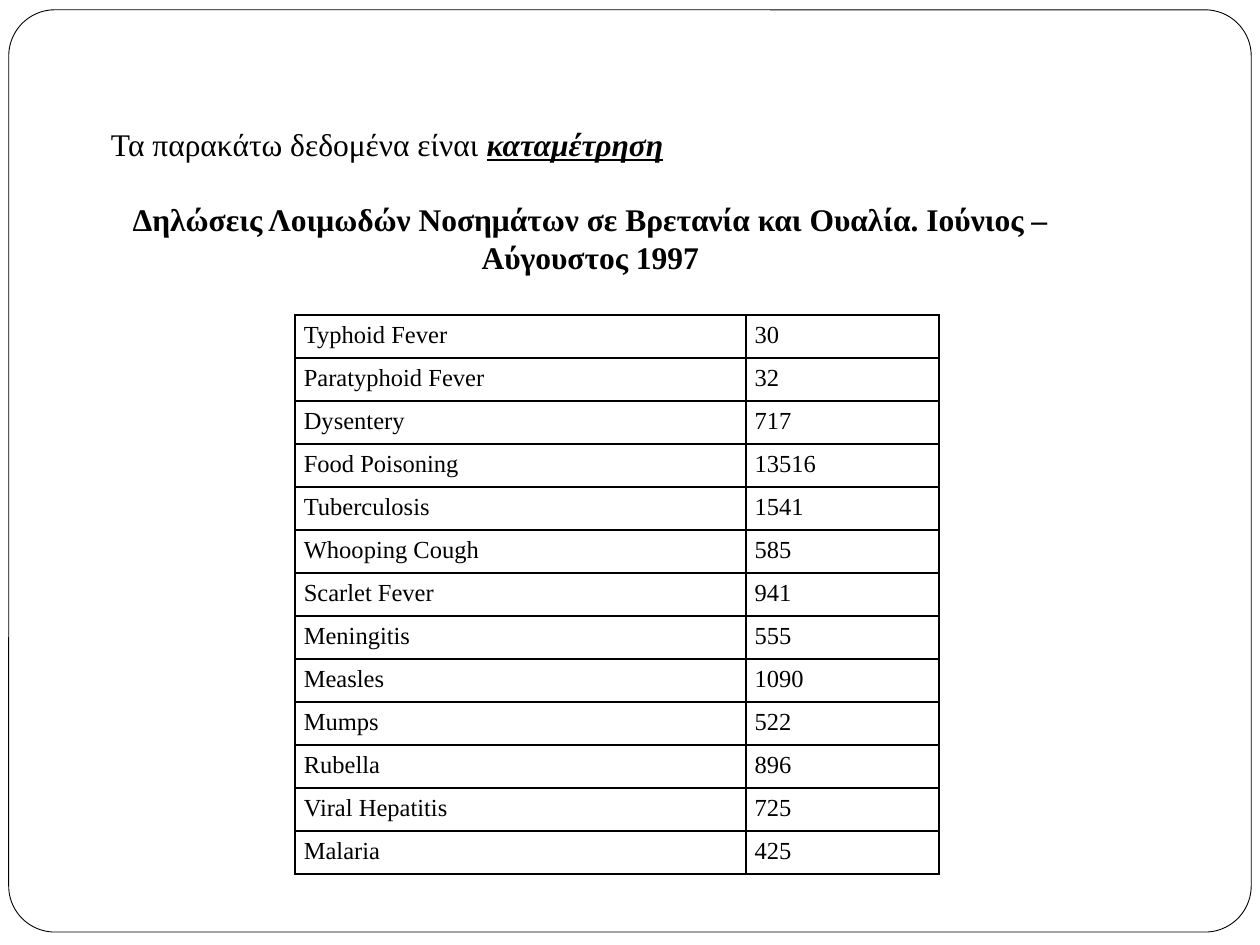
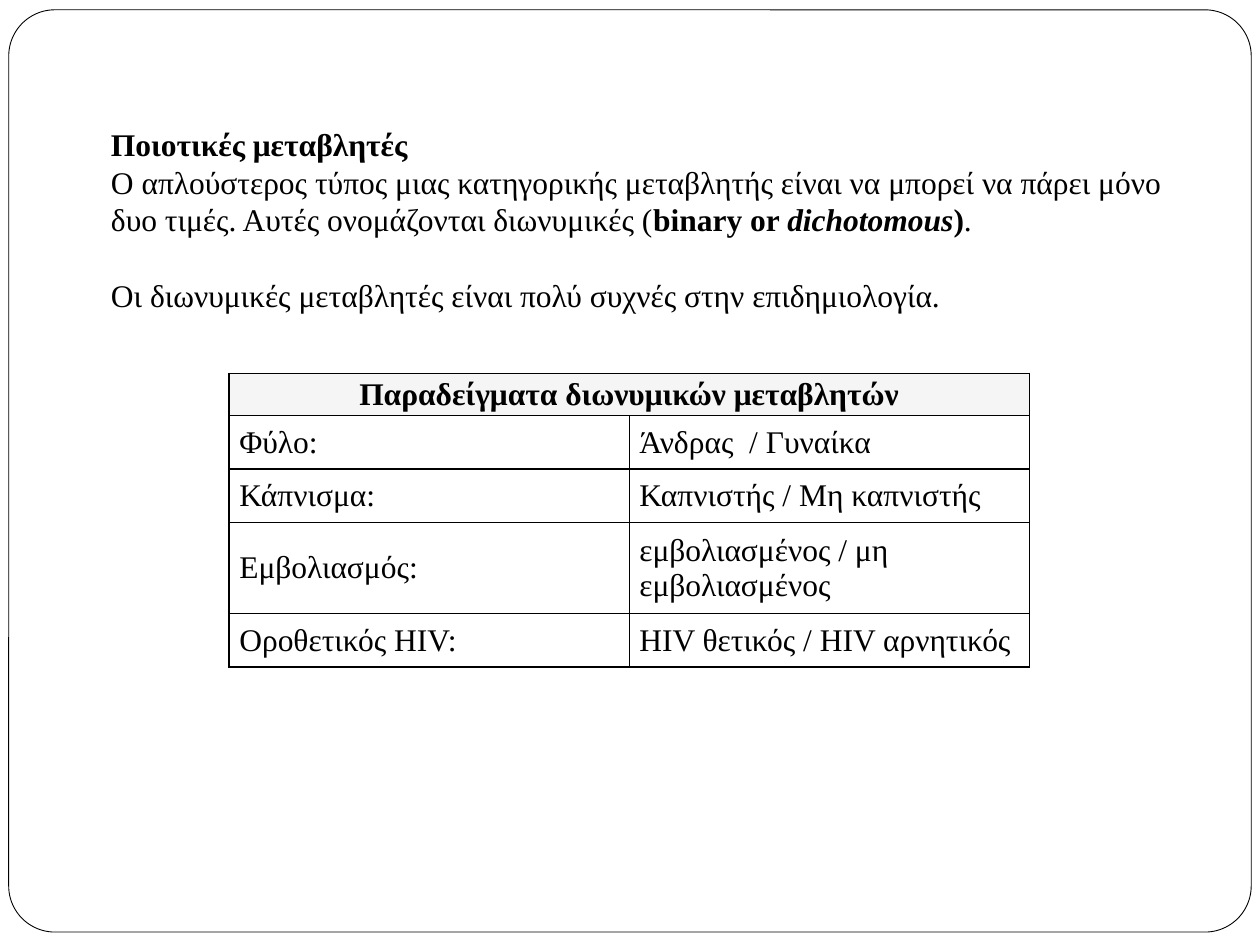
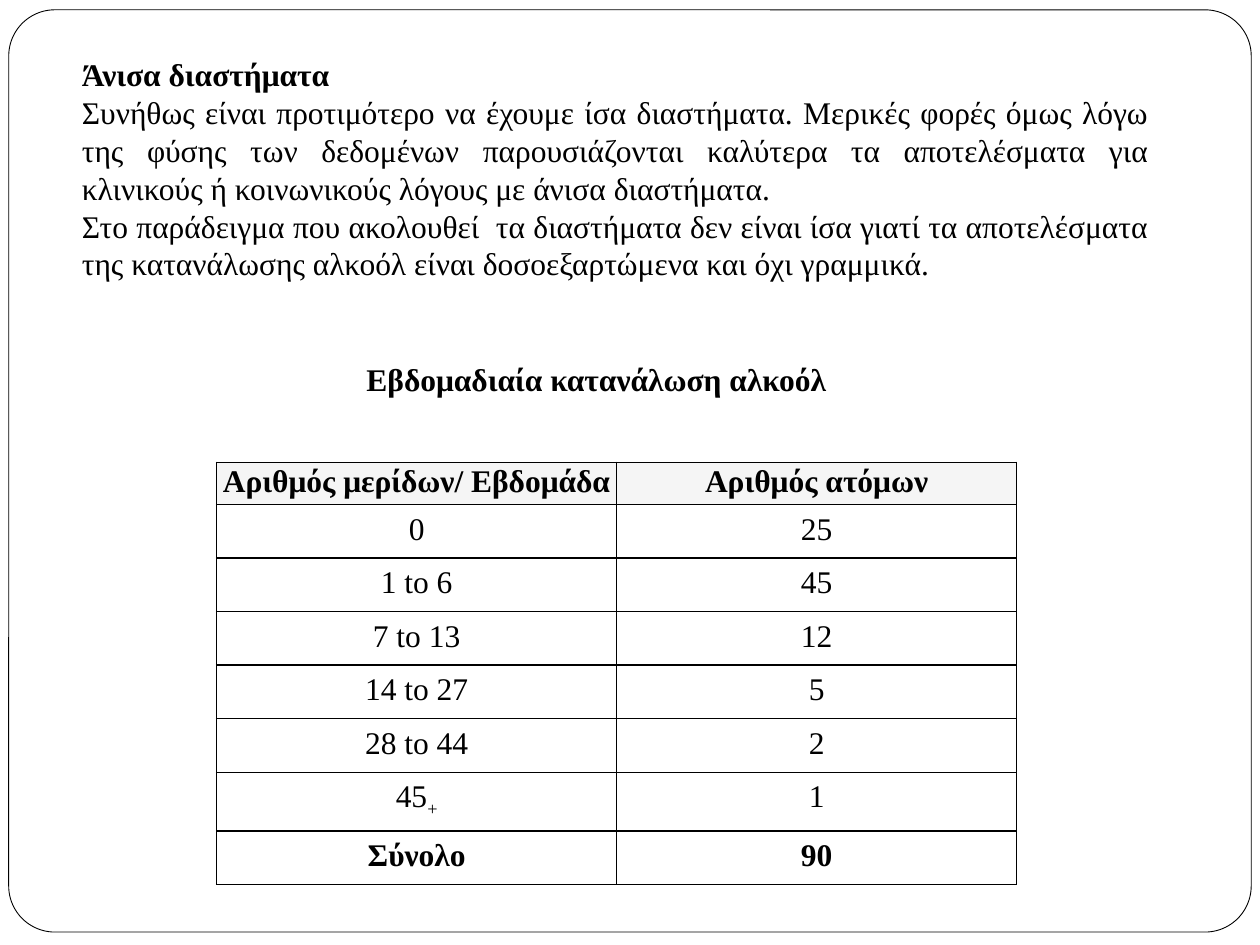
from pptx import Presentation
from pptx.dml.color import RGBColor
from pptx.enum import shapes, text
from pptx.oxml import parse_xml
from pptx.oxml import ns
from pptx.util import Pt

BLACK = RGBColor(0x00, 0x00, 0x00)
WHITE = RGBColor(0xFF, 0xFF, 0xFF)
HEADER = RGBColor(0xF5, 0xF5, 0xF5)
FONT = "Times New Roman"
LINE = 21.6  # line pitch of the 18 pt text
LEFT, CENTER, JUSTIFY = text.PP_ALIGN.LEFT, text.PP_ALIGN.CENTER, text.PP_ALIGN.JUSTIFY
TOP, MIDDLE = text.MSO_ANCHOR.TOP, text.MSO_ANCHOR.MIDDLE


def write(tf, paragraphs, align=LEFT, size=18, pitch=None, gap=0):
    """Fill a text frame; a paragraph is a list of (text, style letters)."""
    for i, runs in enumerate(paragraphs):
        p = tf.paragraphs[0] if i == 0 else tf.add_paragraph()
        p.alignment = align
        p.space_before = Pt(gap if i else 0)
        if pitch:
            p.line_spacing = Pt(pitch)
            pPr = p._p.get_or_add_pPr()
            pPr.set("marL", "0")
            pPr.set("indent", "0")
            pPr.append(parse_xml(f"<a:buNone {ns.nsdecls('a')}/>"))
        for words, style in runs:
            r = p.add_run()
            r.text = words
            r.font.name, r.font.size = FONT, Pt(size)
            r.font.color.rgb = BLACK
            r.font.bold, r.font.italic = "b" in style, "i" in style
            r.font.underline = "u" in style
            if "s" in style:
                r.font._element.set("baseline", "-25000")


def add_grid(s, left, top, widths, heights, rows, header=False, **look):
    """Add a table with thin black borders; a row is a list of run lists."""
    size, align = look.get("size", 18), look.get("align", LEFT)
    frame = s.shapes.add_table(len(rows), len(widths), Pt(left), Pt(top),
                               Pt(sum(widths)), Pt(sum(heights)))
    table = frame.table
    table.first_row = table.horz_banding = False
    for column, width in zip(table.columns, widths):
        column.width = Pt(width)
    for i, row in enumerate(rows):
        table.rows[i].height = Pt(heights[i])
        is_header = header and i == 0
        margin_x, margin_y = (1.4, 1.4) if is_header else look["margins"]
        for j in range(len(widths)):
            cell = table.cell(i, j)
            cell.fill.solid()
            cell.fill.fore_color.rgb = HEADER if is_header else WHITE
            cell.margin_left = cell.margin_right = Pt(margin_x)
            cell.margin_top = cell.margin_bottom = Pt(margin_y)
            cell.vertical_anchor = look.get("anchor", TOP)
            for k, side in enumerate("LRTB"):
                cell._tc.get_or_add_tcPr().insert(k, parse_xml(
                    f'<a:ln{side} {ns.nsdecls("a")} w="12700"><a:solidFill>'
                    f'<a:srgbClr val="{BLACK}"/></a:solidFill></a:ln{side}>'))
            if j < len(row):
                write(cell.text_frame, [row[j]], CENTER if is_header else align, size)
        if len(row) < len(widths):
            table.cell(i, 0).merge(table.cell(i, len(widths) - 1))


prs = Presentation()
prs.slide_width, prs.slide_height = Pt(720), Pt(540)
slides = [prs.slides.add_slide(prs.slide_layouts[1]) for _ in range(3)]

# Rounded frame, placed on the master behind everything
frame = slides[0].shapes.add_shape(shapes.MSO_SHAPE.ROUNDED_RECTANGLE,
                                   Pt(5), Pt(5.6), Pt(710), Pt(527))
frame.adjustments[0] = 0.05
frame.shadow.inherit = False
frame.fill.solid()
frame.fill.fore_color.rgb = WHITE
frame.line.color.rgb = BLACK
frame.line.width = Pt(0.5)
frame.element.nvSpPr.cNvPr.id = 20
prs.slide_master.shapes.element.insert(2, frame.element)

# Titles and body texts: box, alignment, gap between paragraphs, paragraphs
titles = [
    ((56.2, 110.9, 562.3, 50.4), CENTER, 0,
     [[("Δηλώσεις Λοιμωδών Νοσημάτων σε Βρετανία και Ουαλία. Ιούνιος – Αύγουστος 1997", "b")]]),
    ((56.2, 67.7, 621.4, 28.8), LEFT, 0, [[("Ποιοτικές μεταβλητές", "b")]]),
    ((39.6, 28.1, 624.2, 28.8), LEFT, 0, [[("Άνισα διαστήματα", "b")]]),
]
bodies = [
    ((56.2, 67.7, 562.3, 28.8), LEFT, 0,
     [[("Τα παρακάτω δεδομένα είναι ", ""), ("καταμέτρηση", "biu")]]),
    ((56.2, 67.7 + LINE, 621.4, 93.6), LEFT, LINE,
     [[("Ο απλούστερος τύπος μιας κατηγορικής μεταβλητής είναι να μπορεί να πάρει μόνο "
        "δυο τιμές. Αυτές ονομάζονται διωνυμικές (", ""),
       ("binary or ", "b"), ("dichotomous", "bi"), (")", "b"), (".", "")],
      [("Οι διωνυμικές μεταβλητές είναι πολύ συχνές στην επιδημιολογία.", "")]]),
    ((39.6, 28.1 + LINE, 624.2, 115.2), JUSTIFY, 0,
     [[("Συνήθως είναι προτιμότερο να έχουμε ίσα διαστήματα. Μερικές φορές όμως λόγω της "
        "φύσης των δεδομένων παρουσιάζονται καλύτερα τα αποτελέσματα για κλινικούς ή "
        "κοινωνικούς λόγους με άνισα διαστήματα.", "")],
      [("Στο παράδειγμα που ακολουθεί  τα διαστήματα δεν είναι ίσα γιατί τα αποτελέσματα "
        "της κατανάλωσης αλκοόλ είναι δοσοεξαρτώμενα και όχι γραμμικά.", "")]]),
]
for s, *texts in zip(slides, titles, bodies):
    for sp, (box, align, gap, paragraphs) in zip(s.placeholders, texts):
        sp.left, sp.top, sp.width, sp.height = map(Pt, box)
        tf = sp.text_frame
        tf.auto_size = text.MSO_AUTO_SIZE.NONE
        tf.vertical_anchor = TOP
        write(tf, paragraphs, align, pitch=LINE, gap=gap)

# Slide 1: disease counts
counts = [
    ("Typhoid Fever", 30), ("Paratyphoid Fever", 32), ("Dysentery", 717),
    ("Food Poisoning", 13516), ("Tuberculosis", 1541), ("Whooping Cough", 585),
    ("Scarlet Fever", 941), ("Meningitis", 555), ("Measles", 1090), ("Mumps", 522),
    ("Rubella", 896), ("Viral Hepatitis", 725), ("Malaria", 425),
]
add_grid(slides[0], 168.6, 180, [257.6, 110.4], [24.6] * len(counts),
         [[[(name, "")], [(str(n), "")]] for name, n in counts],
         size=14, margins=(5, 3.6))

# Slide 2: examples of binary variables
examples = [
    ("Φύλο:", "Άνδρας  / Γυναίκα"),
    ("Κάπνισμα:", "Καπνιστής / Μη καπνιστής"),
    ("Εμβολιασμός:", "εμβολιασμένος / μη εμβολιασμένος"),
    ("Οροθετικός HIV:", "HIV θετικός / HIV αρνητικός"),
]
rows = [[[("Παραδείγματα διωνυμικών μεταβλητών", "b")]]]
rows += [[[(words, "")] for words in pair] for pair in examples]
add_grid(slides[1], 131, 213.3, [228.6] * 2, [24.2, 30.6, 30.6, 52, 30.6], rows,
         header=True, anchor=MIDDLE, margins=(5.8, 4.3))

# Slide 3: weekly alcohol consumption
servings = [("0", 25), ("1 to 6", 45), ("7 to 13", 12), ("14 to 27", 5), ("28 to 44", 2)]
rows = [[[("Αριθμός μερίδων/ Εβδομάδα", "b")], [("Αριθμός ατόμων", "b")]]]
rows += [[[(label, "")], [(str(n), "")]] for label, n in servings]
rows += [[[("45", ""), ("+", "s")], [("1", "")]],
         [[("Σύνολο", "b")], [("90", "b")]]]
add_grid(slides[2], 123.8, 264.2, [228.6] * 2, [24.2] + [30.6] * 5 + [33.5, 30.6], rows,
         header=True, align=CENTER, margins=(5.8, 4.3))

caption = slides[2].shapes.add_textbox(Pt(202.3), Pt(202.3), Pt(303.1), Pt(28.8))
caption.text_frame.word_wrap = True
write(caption.text_frame, [[("Εβδομαδιαία κατανάλωση αλκοόλ", "b")]], pitch=LINE)

prs.save("out.pptx")
